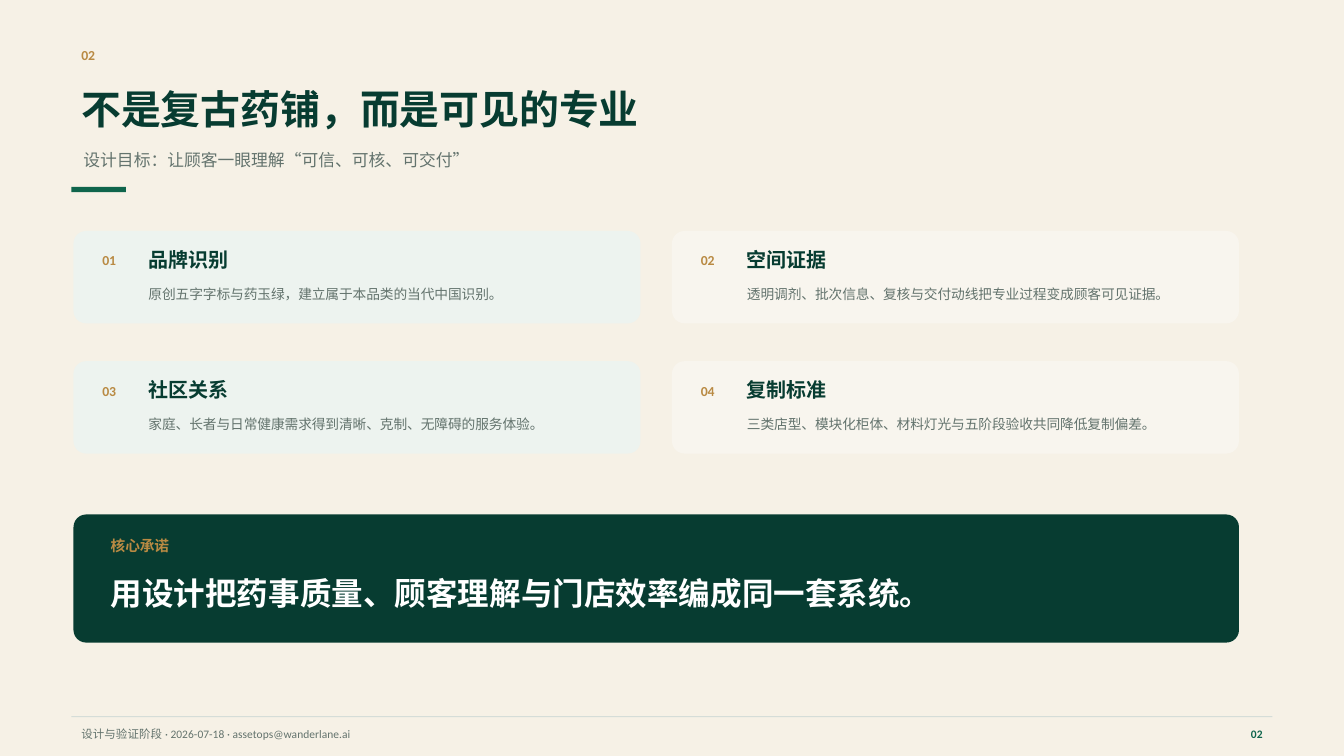
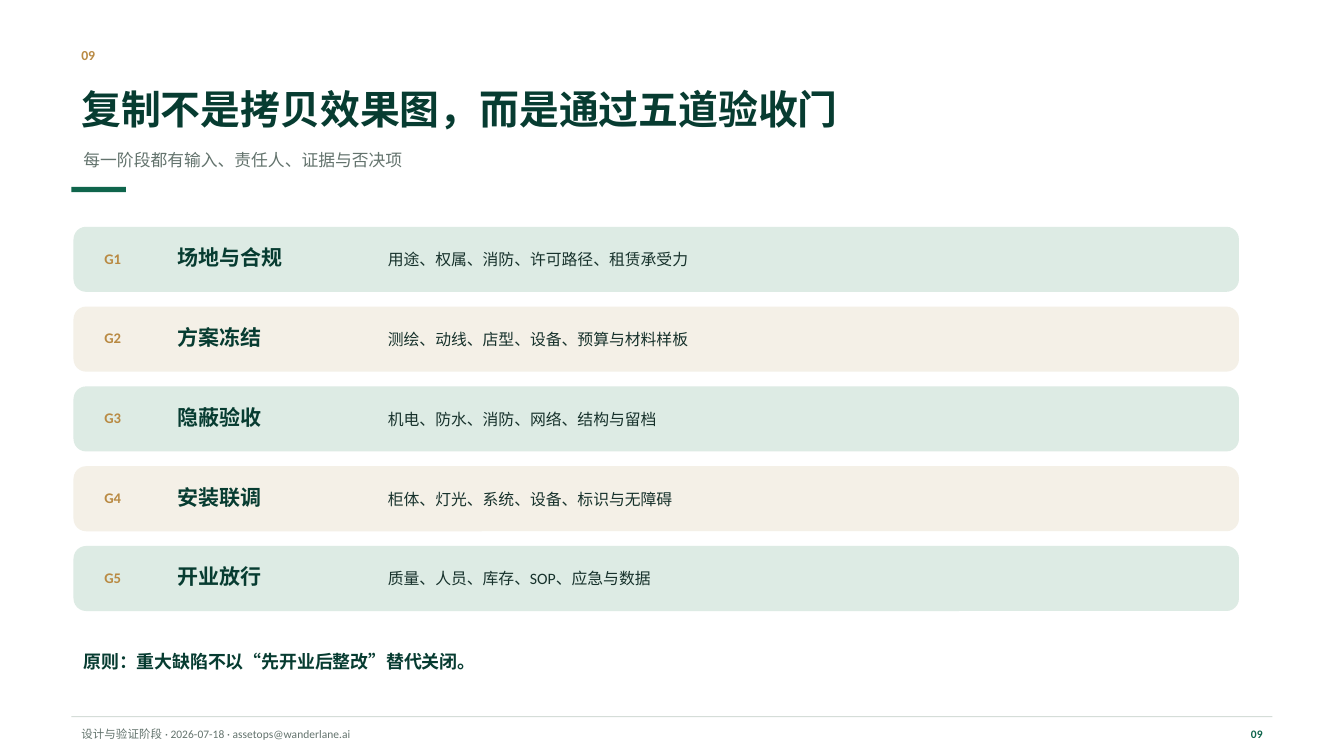
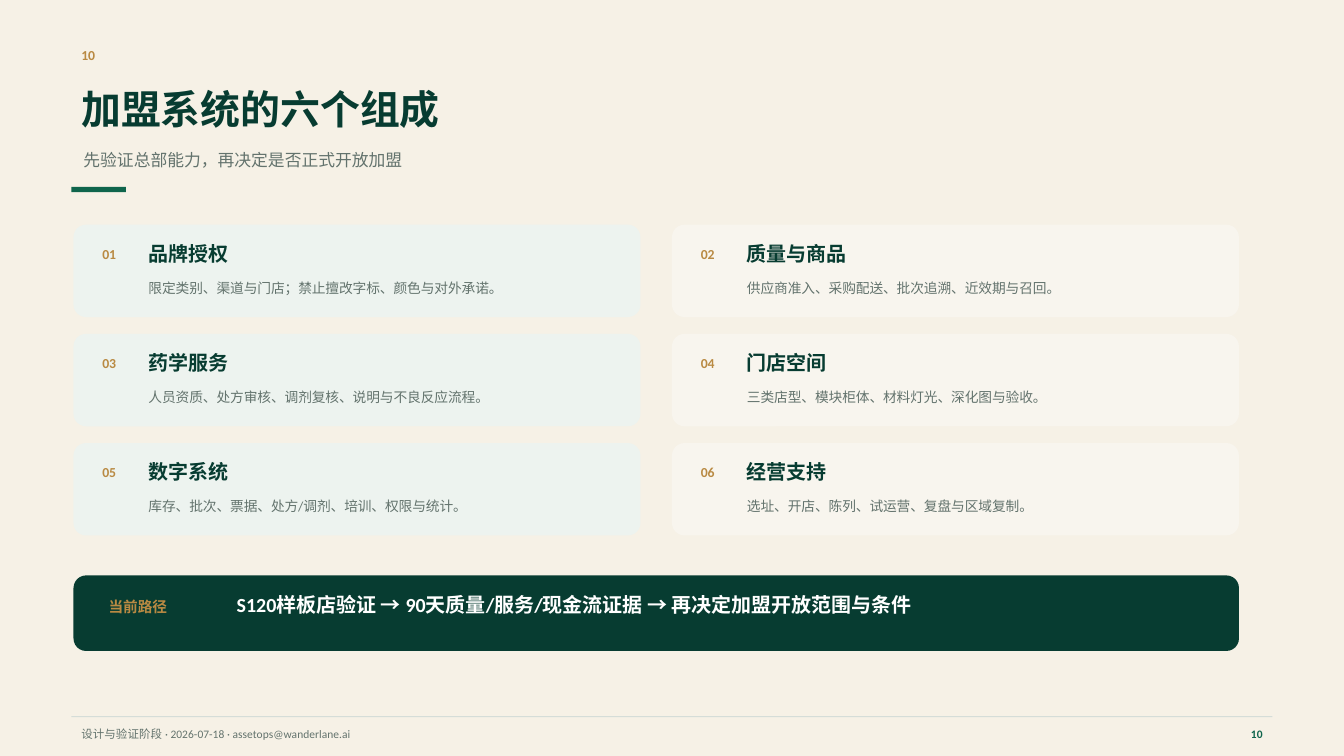
from pptx import Presentation
from pptx import util as u
from pptx.dml.color import RGBColor
from pptx.enum import shapes, text

COLUMNS, ROWS = 1280, 720
LEFT, WIDTH = 70, 1110
CARD_WIDTH, CARD_HEIGHT = 540, 88
COLUMN_PITCH = WIDTH - CARD_WIDTH
GATE_TOP, GATE_HEIGHT, GATE_PITCH = 216, 62, 76
RADIUS = 12

CREAM = RGBColor(0xF6, 0xF1, 0xE6)
WHITE = RGBColor(0xFF, 0xFF, 0xFF)
DARK_GREEN = RGBColor(0x07, 0x3C, 0x31)
JADE = RGBColor(0x0F, 0x65, 0x4C)
GOLD = RGBColor(0xB9, 0x8A, 0x43)
GREY = RGBColor(0x63, 0x73, 0x6D)
INK = RGBColor(0x17, 0x32, 0x2C)
RULE = RGBColor(0xD5, 0xDD, 0xD8)
CARD_FILLS = (RGBColor(0xED, 0xF3, 0xEF), RGBColor(0xF8, 0xF5, 0xEE))
GATE_FILLS = (RGBColor(0xDD, 0xEB, 0xE4), RGBColor(0xF4, 0xF0, 0xE7))

FOOTER = "设计与验证阶段 · 2026-07-18 · assetops@wanderlane.ai"


class Deck:
    font = "Calibri"

    def __init__(self):
        self.presentation = Presentation()
        self.presentation.slide_width = u.Inches(13.333333)
        self.presentation.slide_height = u.Inches(7.5)
        self.slide = None

    def place(self, left, top, width, height):
        column = self.presentation.slide_width / COLUMNS
        row = self.presentation.slide_height / ROWS
        return [u.Emu(round(length)) for length in
                (left * column, top * row, width * column, height * row)]

    def label(self, words, left, top, width, height, size, color,
              bold=True, align=text.PP_ALIGN.LEFT):
        box = self.slide.shapes.add_textbox(*self.place(left, top, width, height))
        frame = box.text_frame
        frame.word_wrap = True
        frame.vertical_anchor = text.MSO_ANCHOR.MIDDLE
        frame.text = words
        paragraph = frame.paragraphs[0]
        paragraph.alignment = align
        font = paragraph.runs[0].font
        font.name = self.font
        font.size = u.Pt(size)
        font.bold = bold
        font.color.rgb = color

    def block(self, left, top, width, height, fill, kind=shapes.MSO_SHAPE.RECTANGLE):
        shape = self.slide.shapes.add_shape(kind, *self.place(left, top, width, height))
        shape.shadow.inherit = False
        shape.fill.solid()
        shape.fill.fore_color.rgb = fill
        shape.line.fill.background()
        return shape

    def panel(self, left, top, width, height, fill):
        shape = self.block(left, top, width, height, fill,
                           shapes.MSO_SHAPE.ROUNDED_RECTANGLE)
        shape.adjustments[0] = RADIUS / height

    def page(self, number, title, subtitle, background):
        self.slide = self.presentation.slides.add_slide(
            self.presentation.slide_layouts[6])
        fill = self.slide.background.fill
        fill.solid()
        fill.fore_color.rgb = background
        self.label(number, 68, 36, 54, 32, 9.75, GOLD)
        self.label(title, 68, 74, 1120, 58, 28.5, DARK_GREEN)
        self.label(subtitle, LEFT, 134, 1080, 36, 12, GREY, bold=False)
        self.block(68, 178, 52, 5, JADE)
        self.block(68, 682, 1144, 1, RULE)
        self.label(FOOTER, 68, 688, 900, 22, 8.25, GREY, bold=False)
        self.label(number, 1160, 688, 52, 22, 8.25, JADE, align=text.PP_ALIGN.RIGHT)

    def cards(self, top, pitch, entries):
        for index, (heading, detail) in enumerate(entries):
            row, column = divmod(index, 2)
            x, y = LEFT + column * COLUMN_PITCH, top + row * pitch
            self.panel(x, y, CARD_WIDTH, CARD_HEIGHT, CARD_FILLS[column])
            self.label(f"{index + 1:02}", x + 18, y + 14, 42, 28, 9.75, GOLD)
            self.label(heading, x + 62, y + 12, 462, 30, 14.25, DARK_GREEN)
            self.label(detail, x + 62, y + 42, 458, 36, 9.75, GREY, bold=False)

    def gates(self, entries):
        for index, (heading, detail) in enumerate(entries):
            y = GATE_TOP + index * GATE_PITCH
            self.panel(LEFT, y, WIDTH, GATE_HEIGHT, GATE_FILLS[index % 2])
            self.label(f"G{index + 1}", 90, y + 13, 60, 34, 10.5, GOLD)
            self.label(heading, 160, y + 12, 190, 34, 15, DARK_GREEN)
            self.label(detail, 360, y + 12, 790, 38, 11.25, INK, bold=False)


def main():
    deck = Deck()

    deck.page("02", "不是复古药铺，而是可见的专业",
              "设计目标：让顾客一眼理解“可信、可核、可交付”", CREAM)
    deck.cards(220, 124, [
        ("品牌识别", "原创五字字标与药玉绿，建立属于本品类的当代中国识别。"),
        ("空间证据", "透明调剂、批次信息、复核与交付动线把专业过程变成顾客可见证据。"),
        ("社区关系", "家庭、长者与日常健康需求得到清晰、克制、无障碍的服务体验。"),
        ("复制标准", "三类店型、模块化柜体、材料灯光与五阶段验收共同降低复制偏差。"),
    ])
    deck.panel(LEFT, 490, WIDTH, 122, DARK_GREEN)
    deck.label("核心承诺", 96, 506, 150, 28, 10.5, GOLD)
    deck.label("用设计把药事质量、顾客理解与门店效率编成同一套系统。",
               96, 542, 1000, 46, 22.5, WHITE)

    deck.page("09", "复制不是拷贝效果图，而是通过五道验收门",
              "每一阶段都有输入、责任人、证据与否决项", WHITE)
    deck.gates([
        ("场地与合规", "用途、权属、消防、许可路径、租赁承受力"),
        ("方案冻结", "测绘、动线、店型、设备、预算与材料样板"),
        ("隐蔽验收", "机电、防水、消防、网络、结构与留档"),
        ("安装联调", "柜体、灯光、系统、设备、标识与无障碍"),
        ("开业放行", "质量、人员、库存、SOP、应急与数据"),
    ])
    deck.label("原则：重大缺陷不以“先开业后整改”替代关闭。",
               LEFT, 616, 900, 28, 12.75, DARK_GREEN)

    deck.page("10", "加盟系统的六个组成",
              "先验证总部能力，再决定是否正式开放加盟", CREAM)
    deck.cards(214, 104, [
        ("品牌授权", "限定类别、渠道与门店；禁止擅改字标、颜色与对外承诺。"),
        ("质量与商品", "供应商准入、采购配送、批次追溯、近效期与召回。"),
        ("药学服务", "人员资质、处方审核、调剂复核、说明与不良反应流程。"),
        ("门店空间", "三类店型、模块柜体、材料灯光、深化图与验收。"),
        ("数字系统", "库存、批次、票据、处方/调剂、培训、权限与统计。"),
        ("经营支持", "选址、开店、陈列、试运营、复盘与区域复制。"),
    ])
    deck.panel(LEFT, 548, WIDTH, 72, DARK_GREEN)
    deck.label("当前路径", 94, 563, 120, 30, 10.5, GOLD)
    deck.label("S120样板店验证 → 90天质量/服务/现金流证据 → 再决定加盟开放范围与条件",
               216, 558, 930, 36, 14.25, WHITE)

    deck.presentation.save("out.pptx")


if __name__ == "__main__":
    main()
